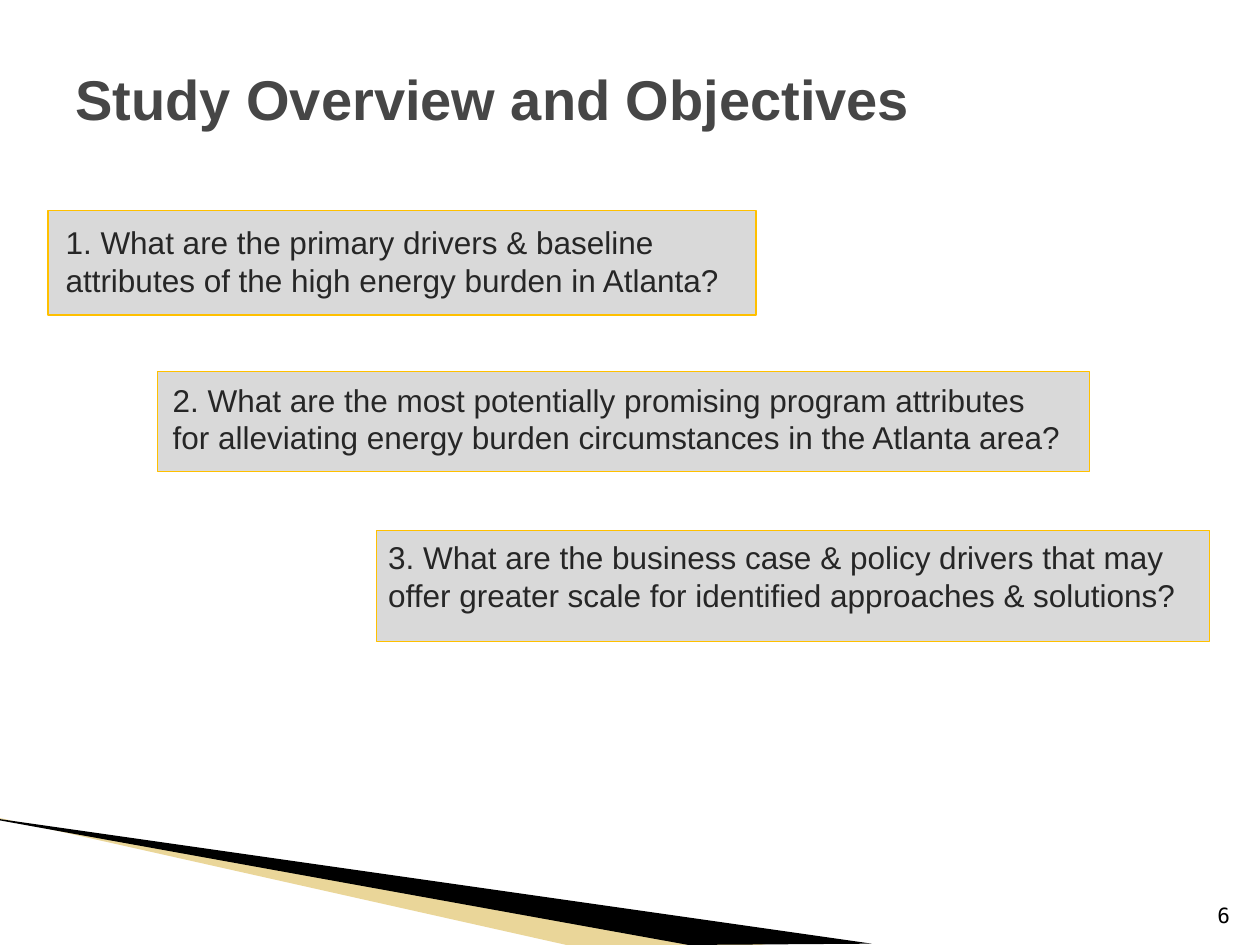
import pptx
import pptx.dml.color
import pptx.enum.shapes
import pptx.enum.text
import pptx.oxml.ns
import pptx.util
from lxml import etree

# The page is a grid of 100 columns by 75 rows of equal cells.
WIDTH, HEIGHT = pptx.util.Inches(10), pptx.util.Inches(7.5)
COLUMN, ROW = WIDTH / 100, HEIGHT / 75

# Each question: box (left, top, width, height), insets (left, top, right), wording
QUESTIONS = [
    ((3.8, 16.7, 56.2, 8.3), (1.4, 1, 1.1),
     "1. What are the primary drivers & baseline attributes of the high "
     "energy burden in Atlanta?"),
    ((12.5, 29.5, 74, 7.9), (1.2, 0.7, 2.2),
     "2. What are the most potentially promising program attributes for "
     "alleviating energy burden circumstances in the Atlanta area?"),
    ((29.9, 42.1, 66.1, 8.8), (0.9, 0.6, 1),
     "3. What are the business case & policy drivers that may offer greater "
     "scale for identified approaches & solutions?"),
]


def color(value):
    return pptx.dml.color.RGBColor.from_string(value)


def grid(left, top, width, height):
    return (round(left * COLUMN), round(top * ROW),
            round(width * COLUMN), round(height * ROW))


def write(box, text, size, ink, font="Arial", bold=False):
    frame = box.text_frame
    frame.word_wrap = True
    para = frame.paragraphs[0]
    para.text = text
    para.alignment = pptx.enum.text.PP_ALIGN.LEFT
    para.font.name, para.font.size = font, pptx.util.Pt(size)
    para.font.bold = bold
    para.font.color.rgb = color(ink)
    return para


def add_title(page, area, text):
    box = page.shapes.add_textbox(*grid(*area))
    box.text_frame.vertical_anchor = pptx.enum.text.MSO_ANCHOR.MIDDLE
    write(box, text, 32, "464646", bold=True).space_after = pptx.util.Pt(12)


def add_question(page, area, insets, text):
    box = page.shapes.add_shape(
        pptx.enum.shapes.MSO_SHAPE.RECTANGLE, *grid(*area))
    box.shadow.inherit = False
    box.fill.solid()
    box.fill.fore_color.rgb = color("D9D9D9")
    box.line.color.rgb = color("FFC000")
    box.line.width = pptx.util.Pt(0.75)
    frame = box.text_frame
    frame.vertical_anchor = pptx.enum.text.MSO_ANCHOR.TOP
    left, top, right = insets
    frame.margin_left, frame.margin_right = round(left * COLUMN), round(right * COLUMN)
    frame.margin_top, frame.margin_bottom = round(top * ROW), 0
    write(box, text, 18, "262626")


def add_blade(page, area, points, fill, opacity=100):
    """Draw an outline whose points are shares of the area."""
    left, top, width, height = grid(*area)
    corners = [(round(left + x * width), round(top + y * height))
               for x, y in points]
    builder = page.shapes.build_freeform(*corners[0])
    builder.add_line_segments(corners[1:], close=True)
    blade = builder.convert_to_shape()
    blade.shadow.inherit = False
    blade.line.fill.background()
    blade.fill.solid()
    blade.fill.fore_color.rgb = color(fill)
    if opacity < 100:
        tint = blade.fill._xPr.find(".//" + pptx.oxml.ns.qn("a:srgbClr"))
        alpha = etree.SubElement(tint, pptx.oxml.ns.qn("a:alpha"))
        alpha.set("val", str(opacity * 1000))


def add_corner(page):
    add_blade(page, (-0.1, 64.9, 60.9, 10.1),
              [(0, 0.01), (1, 1), (0.74, 1), (0, 0)], "CC9900", 40)
    add_blade(page, (-0.1, 65, 69.3, 10),
              [(0, 0), (1, 0.99), (0.79, 1), (0, 0.01)], "000000")


def add_page_number(page, area, number):
    box = page.shapes.add_textbox(*grid(*area))
    box.text_frame.vertical_anchor = pptx.enum.text.MSO_ANCHOR.BOTTOM
    para = write(box, number, 12, "000000", "DejaVu Sans Mono")
    para.alignment = pptx.enum.text.PP_ALIGN.RIGHT


def main():
    deck = pptx.Presentation()
    deck.slide_width, deck.slide_height = WIDTH, HEIGHT
    page = deck.slides.add_slide(deck.slide_layouts[6])
    add_corner(page)
    add_title(page, (5, 3, 90, 9.5), "Study Overview and Objectives")
    for area, insets, text in QUESTIONS:
        add_question(page, area, insets, text)
    add_page_number(page, (92.5, 70.1, 6.1, 4), "6")
    deck.save("out.pptx")


if __name__ == "__main__":
    main()
